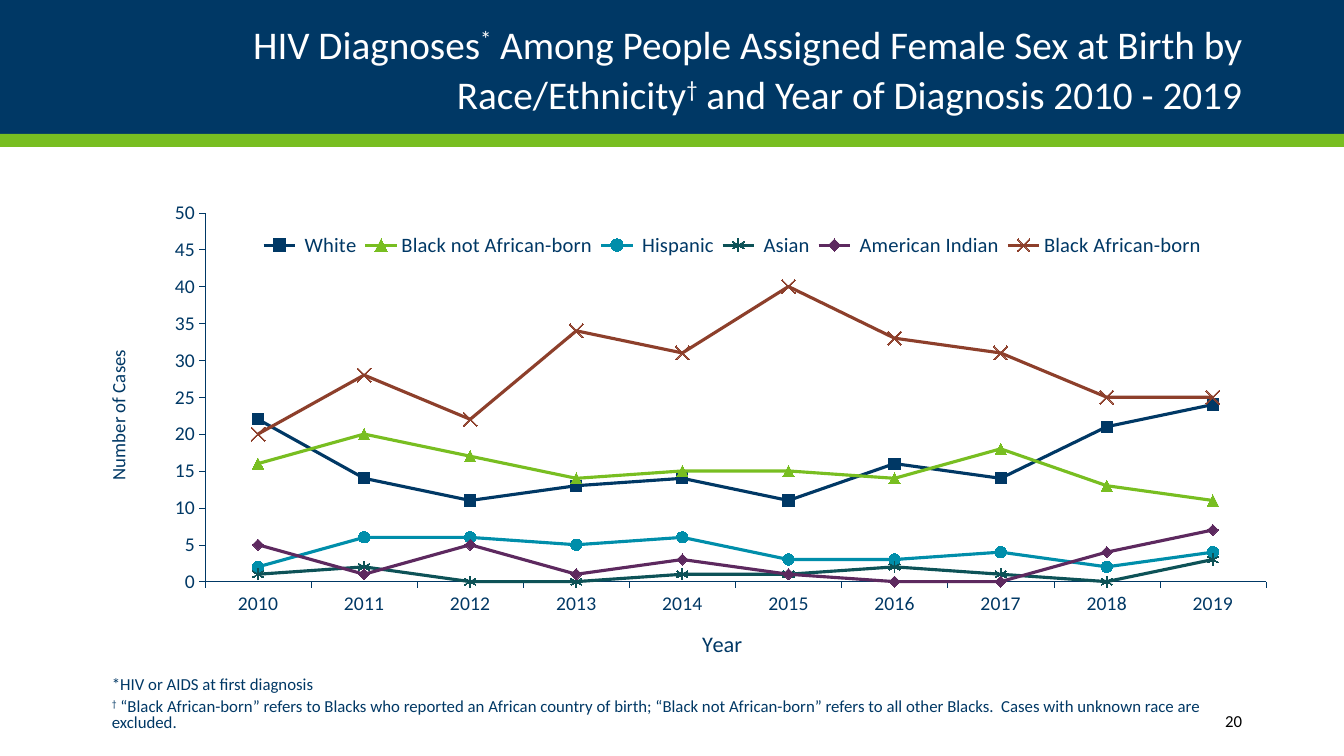
from lxml.etree import SubElement
from pptx import Presentation
from pptx.chart.data import CategoryChartData
from pptx.dml.color import RGBColor
from pptx.enum.chart import XL_CHART_TYPE, XL_LEGEND_POSITION, XL_MARKER_STYLE, XL_TICK_MARK
from pptx.enum.shapes import MSO_SHAPE
from pptx.enum.text import MSO_ANCHOR, PP_ALIGN
from pptx.oxml.ns import qn
from pptx.util import Pt

COLORS = {
    "navy": "003865", "green": "78BE21", "teal": "008EAA", "pine": "0D5257",
    "plum": "5D295F", "rust": "8D3F2B", "white": "FFFFFF", "black": "000000",
}
FONT = "Calibri"
HEADING = [
    ("HIV Diagnoses", False), ("*", True),
    (" Among People Assigned Female Sex at Birth by Race/Ethnicity", False),
    ("†", True), (" and Year of Diagnosis 2010 - 2019", False),
]
FOOTNOTES = [
    [("*HIV or AIDS at first diagnosis", False)],
    [("†", True),
     (" “Black African-born” refers to Blacks who reported an African country of birth; "
      "“Black not African-born” refers to all other Blacks.  Cases with unknown race are excluded.", False)],
]
PAGE_NUMBER = "20"
BANDS = [("navy", 0, 134), ("green", 134, 13)]
YEARS = [str(year) for year in range(2010, 2020)]
GROUPS = [
    (" White", "navy", XL_MARKER_STYLE.SQUARE, 8, [22, 14, 11, 13, 14, 11, 16, 14, 21, 24]),
    ("Black not African-born", "green", XL_MARKER_STYLE.TRIANGLE, 8, [16, 20, 17, 14, 15, 15, 14, 18, 13, 11]),
    (" Hispanic", "teal", XL_MARKER_STYLE.CIRCLE, 8, [2, 6, 6, 5, 6, 3, 3, 4, 2, 4]),
    (" Asian", "pine", XL_MARKER_STYLE.STAR, 8, [1, 2, 0, 0, 1, 1, 2, 1, 0, 3]),
    (" American Indian", "plum", XL_MARKER_STYLE.DIAMOND, 8, [5, 1, 5, 1, 3, 1, 0, 0, 4, 7]),
    ("Black African-born", "rust", XL_MARKER_STYLE.X, 10, [20, 28, 22, 34, 31, 40, 33, 31, 25, 25]),
]
OPEN_MARKERS = (XL_MARKER_STYLE.STAR, XL_MARKER_STYLE.X)
CHART_BOX = (93, 186, 1203, 480)
PLOT_BOX = (205, 213, 1061, 371)
LEGEND_BOX = (255, 232, 955, 27)


def px(length):
    return round(length * 914400 / 100.8)


def box(*lengths):
    return [px(length) for length in lengths]


def rgb(name):
    return RGBColor.from_string(COLORS[name])


def style(font, size, color):
    font.name, font.size, font.bold = FONT, Pt(size), False
    font.color.rgb = rgb(color)


def write(paragraph, parts, size, color):
    for text, raised in parts:
        run = paragraph.add_run()
        run.text = text
        style(run.font, size, color)
        if raised:
            run._r.get_or_add_rPr().set("baseline", "30000")


def text_area(left, top, width, height):
    frame = slide.shapes.add_textbox(*box(left, top, width, height)).text_frame
    frame.word_wrap = True
    return frame


def place(element, index, left, top, width=None, height=None, inner=False):
    for old in element.findall(qn("c:layout")):
        element.remove(old)
    layout = SubElement(element, qn("c:layout"))
    element.insert(index, layout)
    manual = SubElement(layout, qn("c:manualLayout"))
    chart_left, chart_top, chart_width, chart_height = CHART_BOX
    settings = [("layoutTarget", "inner")] if inner else []
    settings += [("xMode", "edge"), ("yMode", "edge"),
                 ("x", (left - chart_left) / chart_width), ("y", (top - chart_top) / chart_height)]
    if width:
        settings += [("w", width / chart_width), ("h", height / chart_height)]
    for tag, value in settings:
        SubElement(manual, qn(f"c:{tag}")).set("val", str(value))


presentation = Presentation()
presentation.slide_width, presentation.slide_height = box(1344, 756)
slide = presentation.slides.add_slide(presentation.slide_layouts[5])

for color, top, height in BANDS:
    band = slide.shapes.add_shape(MSO_SHAPE.RECTANGLE, *box(0, top, 1344, height))
    band.shadow.inherit = False
    band.fill.solid()
    band.fill.fore_color.rgb = rgb(color)
    band.line.fill.background()

heading = slide.shapes.title
slide.shapes._spTree.append(heading._element)
heading.left, heading.top, heading.width, heading.height = box(93, 17, 1159, 101)
heading.text_frame.vertical_anchor = MSO_ANCHOR.MIDDLE
heading.text_frame.word_wrap = True
heading_line = heading.text_frame.paragraphs[0]
heading_line.alignment = PP_ALIGN.RIGHT
heading_line.line_spacing = 1.05
write(heading_line, HEADING, 28, "white")

footnote_frame = text_area(102, 678, 1110, 56)
footnote_frame.margin_top = footnote_frame.margin_bottom = 0
for index, footnote in enumerate(FOOTNOTES):
    footnote_line = footnote_frame.add_paragraph() if index else footnote_frame.paragraphs[0]
    footnote_line.line_spacing = 0.8
    footnote_line.space_before = Pt(4 * index)
    write(footnote_line, footnote, 12, "navy")

number_frame = text_area(1091, 701, 161, 40)
number_frame.vertical_anchor = MSO_ANCHOR.MIDDLE
number_frame.paragraphs[0].alignment = PP_ALIGN.RIGHT
write(number_frame.paragraphs[0], [(PAGE_NUMBER, False)], 12, "black")

cases = CategoryChartData()
cases.categories = YEARS
for name, _, _, _, counts in GROUPS:
    cases.add_series(name, counts)
chart = slide.shapes.add_chart(XL_CHART_TYPE.LINE_MARKERS, *box(*CHART_BOX), cases).chart
style(chart.font, 14, "navy")
chart.has_title = False
chart.plots[0].vary_by_categories = False
place(chart._chartSpace.chart.plotArea, 0, *PLOT_BOX, inner=True)

for series, (_, color, marker, size, _) in zip(chart.plots[0].series, GROUPS):
    series.smooth = False
    series.format.line.color.rgb = rgb(color)
    series.format.line.width = Pt(2.25)
    series.marker.style = marker
    series.marker.size = size
    series.marker.format.line.color.rgb = rgb(color)
    if marker in OPEN_MARKERS:
        series.marker.format.fill.background()
    else:
        series.marker.format.fill.solid()
        series.marker.format.fill.fore_color.rgb = rgb(color)

AXES = [
    (chart.category_axis, "Year", 16, 698, 628),
    (chart.value_axis, "Number of Cases", 13.5, 102, 348),
]
for axis, caption, size, left, top in AXES:
    axis.has_major_gridlines = False
    axis.major_tick_mark = XL_TICK_MARK.OUTSIDE
    axis.minor_tick_mark = XL_TICK_MARK.NONE
    axis.format.line.color.rgb = rgb("navy")
    axis.format.line.width = Pt(0.25)
    style(axis.tick_labels.font, 14, "navy")
    write(axis.axis_title.text_frame.paragraphs[0], [(caption, False)], size, "navy")
    place(axis.axis_title._element, 1, left, top)
chart.value_axis.minimum_scale = 0
chart.value_axis.maximum_scale = 50
chart.value_axis.major_unit = 5

chart.has_legend = True
chart.legend.position = XL_LEGEND_POSITION.RIGHT
chart.legend.include_in_layout = False
style(chart.legend.font, 14.7, "navy")
place(chart.legend._element, 1, *LEGEND_BOX)

presentation.save("out.pptx")
